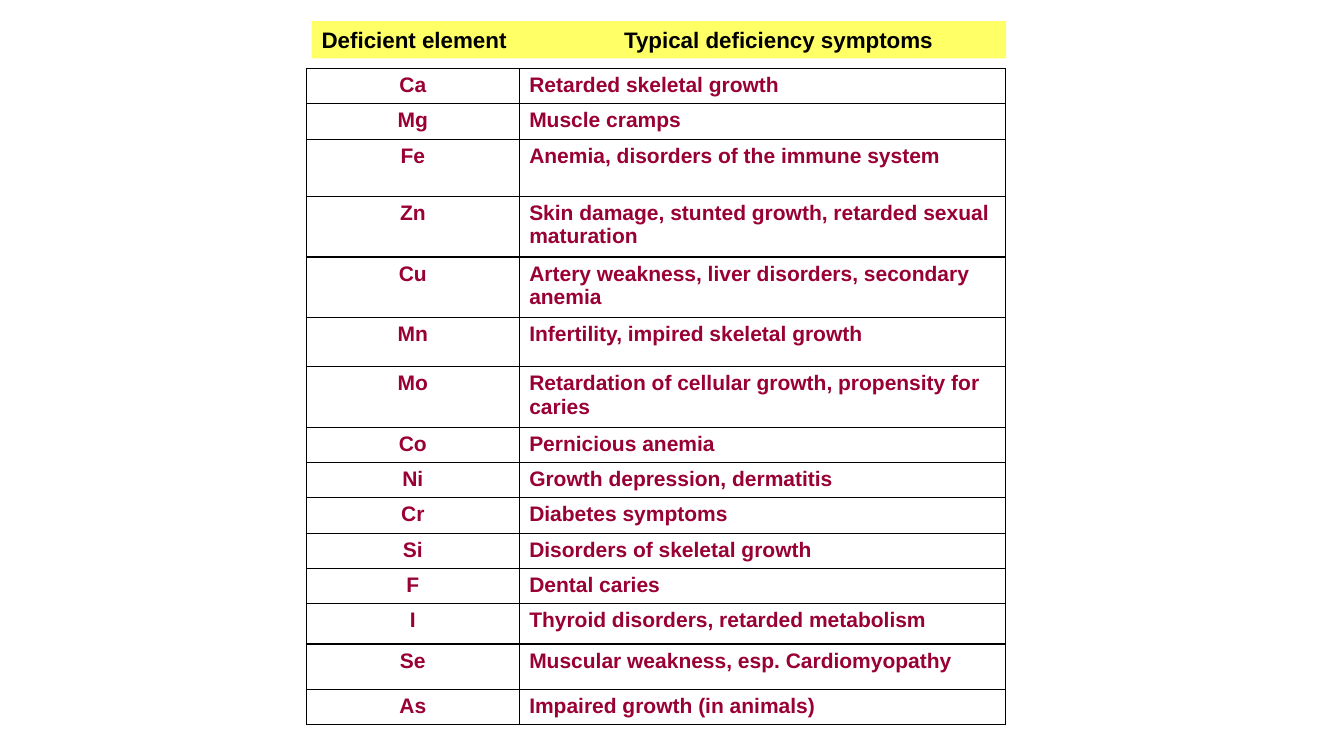
from typing import NamedTuple

from lxml import etree
from pptx import Presentation
from pptx.dml.color import RGBColor
from pptx.enum.text import MSO_ANCHOR, MSO_AUTO_SIZE, PP_ALIGN
from pptx.oxml.ns import qn
from pptx.util import Inches, Pt

LEFT, CENTER = PP_ALIGN.LEFT, PP_ALIGN.CENTER
TOP, MIDDLE = MSO_ANCHOR.TOP, MSO_ANCHOR.MIDDLE
NO_FIT = MSO_AUTO_SIZE.NONE

BLACK = RGBColor(0x00, 0x00, 0x00)
YELLOW = RGBColor(0xFF, 0xFF, 0x66)
MAROON = RGBColor(0x99, 0x00, 0x33)
FONT = "Arial"
WIDTH, HEIGHT = Inches(13.33), Inches(7.5)


class Box(NamedTuple):
    left: float
    top: float
    width: float
    height: float


class Entry(NamedTuple):
    symbol: str
    symptom: str
    height: float = 4.67


HEADER = Box(23.18, 2.8, 51.69, 4.93)
TABLE_LEFT, TABLE_TOP = 22.8, 9.07
COLUMNS = (15.83, 36.16)
ENTRIES = (
    Entry("Ca", "Retarded skeletal growth"),
    Entry("Mg", "Muscle cramps"),
    Entry("Fe", "Anemia, disorders of the immune system", 7.6),
    Entry("Zn", "Skin damage, stunted growth, retarded sexual maturation", 8),
    Entry("Cu", "Artery weakness, liver disorders, secondary anemia", 8),
    Entry("Mn", "Infertility, impired skeletal growth", 6.53),
    Entry("Mo", "Retardation of cellular growth, propensity for caries", 8),
    Entry("Co", "Pernicious anemia"),
    Entry("Ni", "Growth depression, dermatitis"),
    Entry("Cr", "Diabetes symptoms"),
    Entry("Si", "Disorders of skeletal growth"),
    Entry("F", "Dental caries"),
    Entry("I", "Thyroid disorders, retarded metabolism", 5.33),
    Entry("Se", "Muscular weakness, esp. Cardiomyopathy", 6),
    Entry("As", "Impaired growth (in animals)"),
)


def across(percent: float) -> int:
    return round(WIDTH * percent / 100)


def down(percent: float) -> int:
    return round(HEIGHT * percent / 100)


def place(box: Box) -> tuple[int, int, int, int]:
    return across(box.left), down(box.top), across(box.width), down(box.height)


def write(para, text: str, size: float, color: RGBColor, align) -> None:
    para.alignment = align
    run = para.add_run()
    run.text = text
    run.font.name = FONT
    run.font.size = Pt(size)
    run.font.bold = True
    run.font.color.rgb = color


def add_header(slide) -> None:
    title = slide.shapes.title
    title.left, title.top, title.width, title.height = place(HEADER)
    title.fill.solid()
    title.fill.fore_color.rgb = YELLOW
    frame = title.text_frame
    frame.auto_size = NO_FIT
    frame.word_wrap = True
    frame.vertical_anchor = MIDDLE
    para = frame.paragraphs[0]
    stops = etree.SubElement(para._p.get_or_add_pPr(), qn("a:tabLst"))
    etree.SubElement(stops, qn("a:tab"), pos=str(Inches(3)), algn="l")
    write(para, "Deficient element\tTypical deficiency symptoms", 16, BLACK, LEFT)


def add_border(cell) -> None:
    props = cell._tc.get_or_add_tcPr()
    for side in ("a:lnL", "a:lnR", "a:lnT", "a:lnB"):
        line = etree.SubElement(props, qn(side), w=str(Pt(1)))
        fill = etree.SubElement(line, qn("a:solidFill"))
        etree.SubElement(fill, qn("a:srgbClr"), val=str(BLACK))


def fill_cell(cell, text: str, align) -> None:
    add_border(cell)
    cell.fill.background()
    cell.vertical_anchor = TOP
    write(cell.text_frame.paragraphs[0], text, 15, MAROON, align)


def add_entries(slide) -> None:
    box = Box(TABLE_LEFT, TABLE_TOP, sum(COLUMNS), sum(e.height for e in ENTRIES))
    table = slide.shapes.add_table(len(ENTRIES), len(COLUMNS), *place(box)).table
    table.first_row = False
    table.horz_banding = False
    for column, width in zip(table.columns, COLUMNS):
        column.width = across(width)
    for row, entry in zip(table.rows, ENTRIES):
        row.height = down(entry.height)
        fill_cell(row.cells[0], entry.symbol, CENTER)
        fill_cell(row.cells[1], entry.symptom, LEFT)


def main() -> None:
    deck = Presentation()
    deck.slide_width, deck.slide_height = WIDTH, HEIGHT
    slide = deck.slides.add_slide(deck.slide_layouts.get_by_name("Title Only"))
    add_header(slide)
    add_entries(slide)
    deck.save("out.pptx")


if __name__ == "__main__":
    main()
